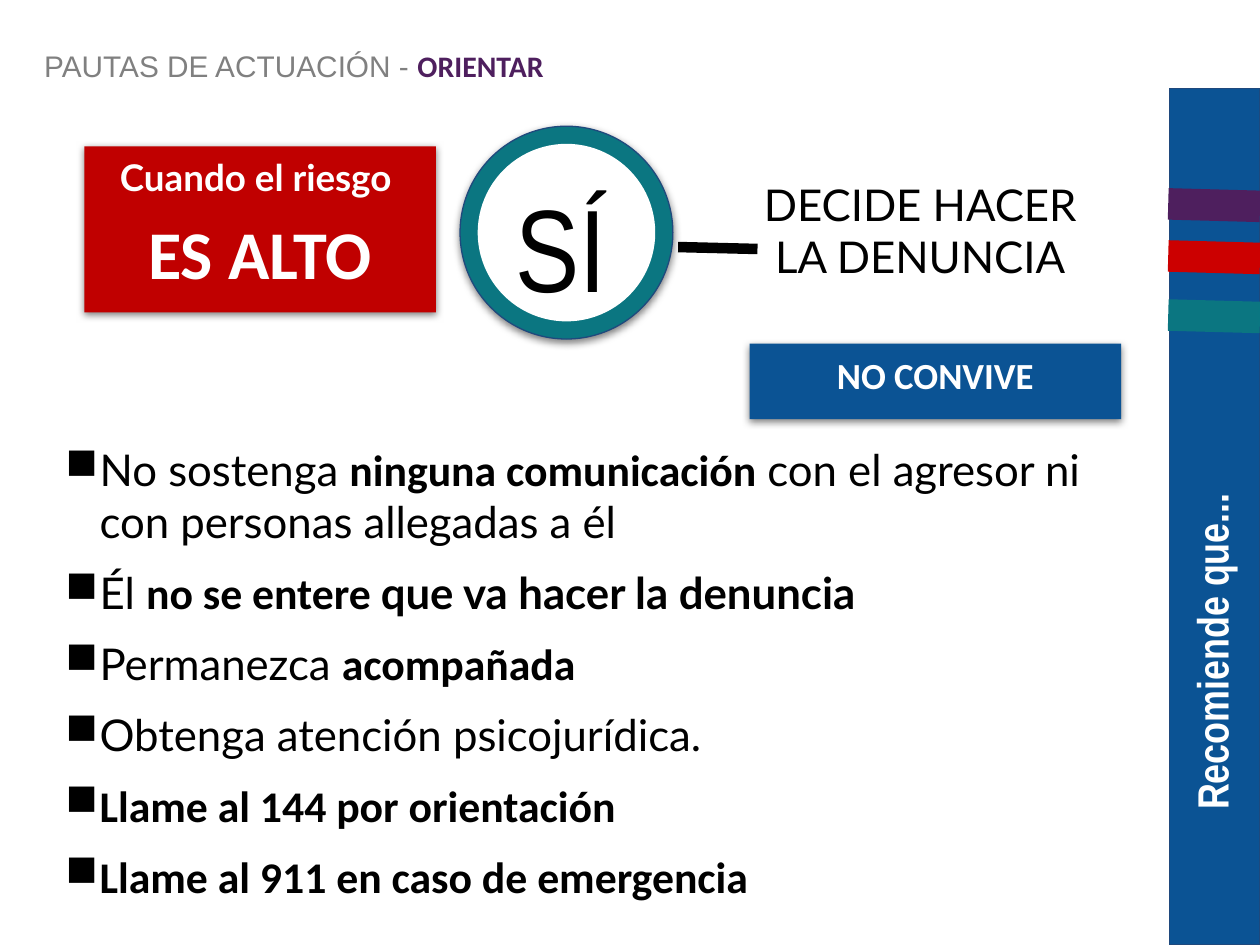
import pptx
import pptx.dml.color
import pptx.enum.shapes
import pptx.enum.text
import pptx.oxml
import pptx.oxml.ns
import pptx.util
from pptx.util import Cm

RGBColor = pptx.dml.color.RGBColor
MSO_SHAPE = pptx.enum.shapes.MSO_SHAPE
LEFT = pptx.enum.text.PP_ALIGN.LEFT
CENTER = pptx.enum.text.PP_ALIGN.CENTER

BLACK = RGBColor(0x00, 0x00, 0x00)
WHITE = RGBColor(0xFF, 0xFF, 0xFF)
GREY = RGBColor(0x80, 0x80, 0x80)
BLUE = RGBColor(0x0B, 0x53, 0x94)
NAVY = RGBColor(0x1F, 0x49, 0x7D)
DARK_RED = RGBColor(0xC0, 0x00, 0x00)
RED = RGBColor(0xCC, 0x00, 0x00)
PURPLE = RGBColor(0x4E, 0x1F, 0x5E)
TEAL = RGBColor(0x0B, 0x76, 0x81)

SHADOW = (
    f'<a:effectLst {pptx.oxml.ns.nsdecls("a")}>'
    '<a:outerShdw blurRad="57150" dist="19050" dir="5400000" algn="bl" rotWithShape="0">'
    '<a:srgbClr val="000000"><a:alpha val="50000"/></a:srgbClr>'
    '</a:outerShdw></a:effectLst>'
)


class SlideBuilder:
    inset = 0.18

    def __init__(self, slide):
        self.slide = slide

    def shape(self, kind, box, fill, line=None, shadow=False):
        """Add a preset shape; box is left, top, width, height in centimetres."""
        shape = self.slide.shapes.add_shape(kind, *map(Cm, box))
        shape.fill.solid()
        shape.fill.fore_color.rgb = fill
        if line is None:
            shape.line.fill.background()
        else:
            shape.line.color.rgb = line
            shape.line.width = pptx.util.Pt(0.75)
        shape.shadow.inherit = False
        if shadow:
            properties = shape._element.spPr
            plain = properties.find(pptx.oxml.ns.qn("a:effectLst"))
            properties.replace(plain, pptx.oxml.parse_xml(SHADOW))
        return shape

    def text_box(self, box):
        return self.slide.shapes.add_textbox(*map(Cm, box))

    def frame(self, shape, anchor=pptx.enum.text.MSO_ANCHOR.TOP, inset=inset, top=None):
        frame = shape.text_frame
        frame.word_wrap = True
        frame.vertical_anchor = anchor
        frame.margin_left = frame.margin_right = frame.margin_bottom = Cm(inset)
        frame.margin_top = Cm(inset if top is None else top)
        return frame

    def paragraph(self, frame, runs, align=LEFT, before=0):
        """Fill the empty first paragraph or add one; a run is text, font, size, colour, bold."""
        first = frame.paragraphs[0]
        paragraph = frame.add_paragraph() if first.runs else first
        paragraph.alignment = align
        paragraph.space_before = pptx.util.Pt(before)
        for text, font, size, color, bold in runs:
            run = paragraph.add_run()
            run.text = text
            run.font.name = font
            run.font.size = pptx.util.Pt(size)
            run.font.bold = bold
            run.font.color.rgb = color
        return paragraph

    def bullet(self, paragraph):
        properties = paragraph._p.get_or_add_pPr()
        properties.set("marL", str(Cm(0.69)))
        properties.set("indent", str(Cm(-0.84)))
        properties.append(pptx.oxml.parse_xml(
            f'<a:buChar {pptx.oxml.ns.nsdecls("a")} char="■"/>'))

    def line(self, start, end, color, width):
        connector = self.slide.shapes.add_connector(
            pptx.enum.shapes.MSO_CONNECTOR.STRAIGHT, *map(Cm, start + end))
        connector.line.color.rgb = color
        connector.line.width = pptx.util.Pt(width)
        connector._element.spPr.append(pptx.oxml.parse_xml(
            f'<a:effectLst {pptx.oxml.ns.nsdecls("a")}/>'))


def add_heading(builder):
    frame = builder.frame(builder.text_box((0.79, 0.89, 21.82, 0.89)),
                          pptx.enum.text.MSO_ANCHOR.BOTTOM, 0.1)
    heading = builder.paragraph(frame, [
        ("PAUTAS DE ACTUACIÓN - ", "Arial", 17, GREY, False),
        ("ORIENTAR", "Calibri", 17, PURPLE, True)])
    heading.line_spacing = 0.8


def add_sidebar(builder):
    builder.shape(MSO_SHAPE.RECTANGLE, (23.57, 1.78, 1.83, 17.27), BLUE, NAVY)
    label = builder.shape(MSO_SHAPE.RECTANGLE, (17.96, 9.19, 13.06, 1.57), BLUE)
    label.rotation = 270
    builder.paragraph(builder.frame(label), [
        ("Recomiende que...", "Arial Narrow", 25, WHITE, True)])


def add_stripes(builder):
    for top, color in ((4.11, PURPLE), (5.16, RED), (6.35, TEAL)):
        builder.line((23.55, top), (25.4, top + 0.05), color, 18)


def add_decision(builder):
    risk = builder.frame(builder.shape(
        MSO_SHAPE.RECTANGLE, (1.7, 2.95, 7.09, 3.35), DARK_RED, shadow=True))
    builder.paragraph(risk, [("Cuando el riesgo ", "Lato", 21, WHITE, True)], CENTER, 7)
    builder.paragraph(risk, [("ES ALTO", "Calibri", 39, WHITE, True)], CENTER, 7)

    decision = builder.frame(builder.text_box((15.11, 3.4, 6.88, 3.23)))
    builder.paragraph(decision, [
        ("DECIDE HACER LA DENUNCIA", "Lato", 25, BLACK, False)], CENTER)

    center_x, center_y = 11.42, 4.69
    for size, fill, line, shadow in ((4.29, TEAL, NAVY, True), (3.58, WHITE, None, False)):
        box = (center_x - size / 2, center_y - size / 2, size, size)
        builder.shape(MSO_SHAPE.OVAL, box, fill, line, shadow)
    answer = builder.frame(builder.text_box((9.04, 3.35, 4.52, 3.58)))
    builder.paragraph(answer, [("SÍ", "Arial Narrow", 67, BLACK, False)], CENTER)
    builder.line((13.67, 4.98), (15.27, 5.02), BLACK, 6)

    living = builder.frame(builder.shape(
        MSO_SHAPE.RECTANGLE, (15.11, 6.93, 7.49, 1.52), BLUE, shadow=True))
    builder.paragraph(living, [("NO CONVIVE", "Calibri", 21, WHITE, True)], CENTER)


def add_advice(builder):
    advice = [
        [("No sostenga ", "Lato", False),
         ("ninguna comunicación", "Calibri", True),
         (" con el agresor ni con personas allegadas a él", "Lato", False)],
        [("Él ", "Lato", False),
         ("no se entere ", "Calibri", True),
         ("que va hacer la denuncia", "Lato", True)],
        [("Permanezca ", "Lato", False), ("acompañada", "Calibri", True)],
        [("Obtenga atención psicojurídica.", "Lato", False)],
        [("Llame al 144 por orientación", "Calibri", True)],
        [("Llame al 911 en caso de emergencia", "Calibri", True)],
    ]
    frame = builder.frame(builder.text_box((1.14, 8.23, 21.11, 10.82)), top=0.69)
    for index, parts in enumerate(advice):
        runs = [(text, font, 25, BLACK, bold) for text, font, bold in parts]
        builder.bullet(builder.paragraph(frame, runs, before=10.6 if index else 0))


def main():
    presentation = pptx.Presentation()
    presentation.slide_width = Cm(25.4)
    presentation.slide_height = Cm(19.05)
    builder = SlideBuilder(presentation.slides.add_slide(presentation.slide_layouts[6]))
    add_heading(builder)
    add_sidebar(builder)
    add_decision(builder)
    add_advice(builder)
    add_stripes(builder)
    presentation.save("out.pptx")


if __name__ == "__main__":
    main()
